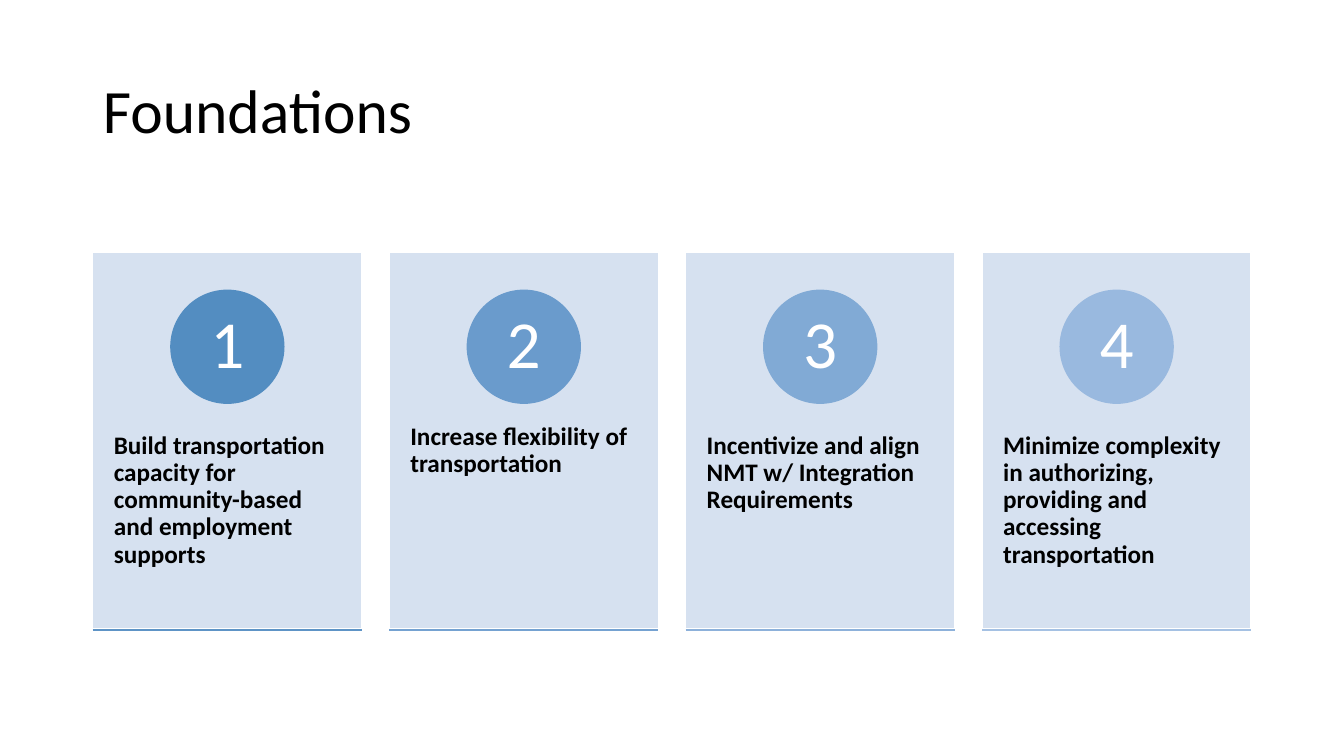
from dataclasses import dataclass

from lxml import etree
from pptx import Presentation
from pptx.dml.color import RGBColor
from pptx.enum.shapes import MSO_CONNECTOR, MSO_SHAPE
from pptx.enum.text import MSO_ANCHOR, PP_ALIGN
from pptx.oxml.ns import qn
from pptx.util import Inches, Pt

RECTANGLE, OVAL = MSO_SHAPE.RECTANGLE, MSO_SHAPE.OVAL
STRAIGHT = MSO_CONNECTOR.STRAIGHT
TOP, MIDDLE = MSO_ANCHOR.TOP, MSO_ANCHOR.MIDDLE
LEFT, CENTER = PP_ALIGN.LEFT, PP_ALIGN.CENTER
TITLE_ONLY = 5


@dataclass(frozen=True)
class Theme:
    font: str = "Calibri"
    title_size: int = 44
    number_size: int = 48
    body_size: int = 18
    line_width: int = 1
    line_spacing: float = 0.9
    black: str = "000000"
    white: str = "FFFFFF"
    card: str = "D2DEEF"
    card_opacity: int = 90
    badges: tuple = ("538DC1", "6A9BCC", "81AAD5", "99B9DF")
    bases: tuple = ("5E94C6", "75A2D1", "8DB1DA", "A5C1E3")


FOUNDATIONS = [
    "Build transportation capacity for community-based and employment supports",
    "Increase flexibility of transportation",
    "Incentivize and align NMT w/ Integration Requirements",
    "Minimize complexity in authorizing, providing and accessing transportation",
]

# Card grid, in inches
CARD_LEFT, CARD_TOP = 0.92, 2.5
CARD_WIDTH, CARD_HEIGHT = 2.67, 3.74
CARD_PITCH = 2.94
BADGE_TOP, BADGE_SIZE = 2.88, 1.12
BODY_TOP, BODY_HEIGHT = 3.93, 2.25
BASE_TOP = 6.25


class SlideBuilder:
    def __init__(self, slide, theme):
        self.slide = slide
        self.theme = theme

    def add_text(self, shape, text, size, color, bold=False, align=LEFT,
                 anchor=TOP, insets=(0.1, 0.05)):
        frame = shape.text_frame
        frame.word_wrap = True
        frame.vertical_anchor = anchor
        frame.margin_left = frame.margin_right = Inches(insets[0])
        frame.margin_top = frame.margin_bottom = Inches(insets[1])
        para = frame.paragraphs[0]
        para.alignment = align
        para.line_spacing = self.theme.line_spacing
        span = para.add_run()
        span.text = text
        span.font.name = self.theme.font
        span.font.size = Pt(size)
        span.font.bold = bold
        span.font.color.rgb = RGBColor.from_string(color)

    def title(self, text, left, top, width, height):
        box = self.slide.shapes.title
        box.left, box.top = Inches(left), Inches(top)
        box.width, box.height = Inches(width), Inches(height)
        self.add_text(box, text, self.theme.title_size, self.theme.black,
                      anchor=MIDDLE)

    def shape(self, kind, left, top, width, height, fill, line, opacity=100):
        box = self.slide.shapes.add_shape(
            kind, Inches(left), Inches(top), Inches(width), Inches(height))
        box.shadow.inherit = False
        box.fill.solid()
        box.fill.fore_color.rgb = RGBColor.from_string(fill)
        box.line.color.rgb = RGBColor.from_string(line)
        box.line.width = Pt(self.theme.line_width)
        if opacity < 100:
            color = box._element.spPr.find(qn("a:solidFill"))[0]
            etree.SubElement(color, qn("a:alpha"), val=str(opacity * 1000))
        return box

    def body(self, text, left, top, width, height):
        box = self.slide.shapes.add_textbox(
            Inches(left), Inches(top), Inches(width), Inches(height))
        self.add_text(box, text, self.theme.body_size, self.theme.black,
                      bold=True, insets=(0.21, 0.36))

    def rule(self, left, top, width, color):
        line = self.slide.shapes.add_connector(
            STRAIGHT, Inches(left), Inches(top), Inches(left + width), Inches(top))
        line.line.color.rgb = RGBColor.from_string(color)
        line.line.width = Pt(self.theme.line_width)
        etree.SubElement(line._element.spPr, qn("a:effectLst"))

    def card(self, number, left, text, badge_color, base_color):
        theme = self.theme
        self.shape(RECTANGLE, left, CARD_TOP, CARD_WIDTH, CARD_HEIGHT,
                   theme.card, theme.white, theme.card_opacity)
        self.body(text, left, BODY_TOP, CARD_WIDTH, BODY_HEIGHT)
        badge_left = left + (CARD_WIDTH - BADGE_SIZE) / 2
        badge = self.shape(OVAL, badge_left, BADGE_TOP, BADGE_SIZE, BADGE_SIZE,
                           badge_color, badge_color)
        self.add_text(badge, str(number), theme.number_size, theme.white,
                      align=CENTER, anchor=MIDDLE, insets=(0.09, 0.01))
        self.rule(left, BASE_TOP, CARD_WIDTH, base_color)


def main():
    deck = Presentation()
    deck.slide_width, deck.slide_height = Inches(13.33), Inches(7.5)
    page = deck.slides.add_slide(deck.slide_layouts[TITLE_ONLY])
    theme = Theme()
    builder = SlideBuilder(page, theme)

    # Heading
    builder.title("Foundations", 0.92, 0.4, 11.5, 1.45)

    # Numbered cards
    cards = zip(FOUNDATIONS, theme.badges, theme.bases)
    for index, (text, badge_color, base_color) in enumerate(cards):
        left = CARD_LEFT + index * CARD_PITCH
        builder.card(index + 1, left, text, badge_color, base_color)

    deck.save("out.pptx")


if __name__ == "__main__":
    main()
